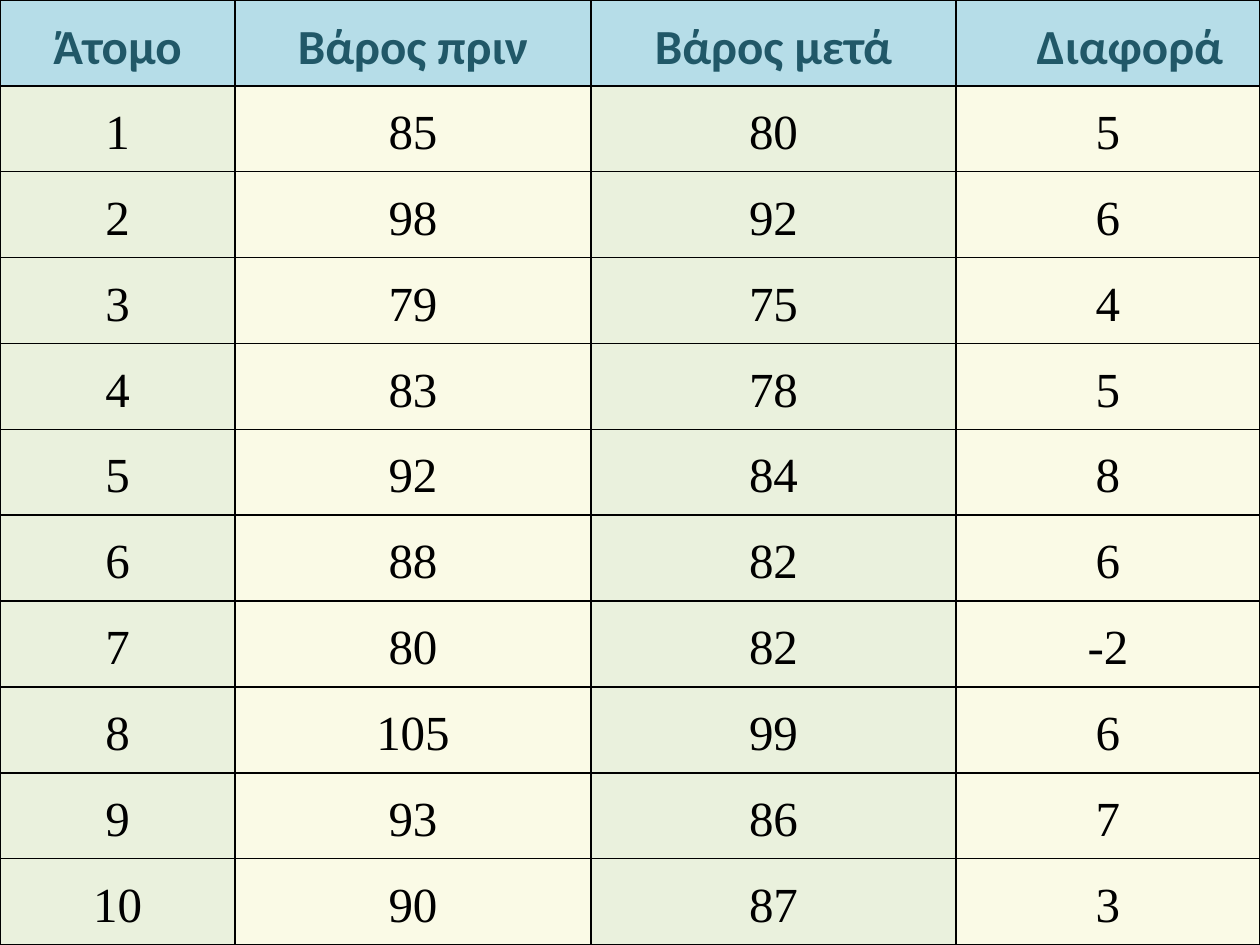
from lxml.etree import SubElement
from pptx import Presentation
from pptx.dml.color import RGBColor
from pptx.enum.text import MSO_ANCHOR, PP_ALIGN
from pptx.oxml.ns import qn
from pptx.util import Emu, Pt

HEADINGS = ["Άτομο", "Βάρος πριν", "Βάρος μετά", "Διαφορά"]
WEIGHTS = [  # before, after
    (85, 80), (98, 92), (79, 75), (83, 78), (92, 84),
    (88, 82), (80, 82), (105, 99), (93, 86), (90, 87),
]
ROWS = [HEADINGS] + [
    [person, before, after, before - after]
    for person, (before, after) in enumerate(WEIGHTS, start=1)
]

SLIDE_WIDTH, SLIDE_HEIGHT = 1260, 945
COLUMN_WIDTHS = [235, 356, 365, 304]
SIDE_MARGIN = 9
DIFFERENCE_HEADING_INDENT = 44

HEADING_FILL = "B6DDE8"
COLUMN_FILLS = ["EAF1DD", "FAFAE6", "EAF1DD", "FAFAE6"]
BORDER_COLOR = "000000"
HEADING_FONT = {"name": "Calibri", "size": Pt(28), "bold": True}
NUMBER_FONT = {"name": "Times New Roman", "size": Pt(28), "bold": False}
PARAGRAPH_FORMAT = {
    "alignment": PP_ALIGN.CENTER,
    "line_spacing": 1.15,
    "space_before": Pt(3),
    "space_after": Pt(3),
}


def px(length):
    return Emu(round(length * 914400 / 126))


CELL_FORMAT = {
    "vertical_anchor": MSO_ANCHOR.MIDDLE,
    "margin_left": px(SIDE_MARGIN),
    "margin_right": px(SIDE_MARGIN),
    "margin_top": 0,
    "margin_bottom": 0,
}


def color(hex_string):
    return RGBColor.from_string(hex_string)


def apply_format(target, values):
    for attribute, value in values.items():
        setattr(target, attribute, value)


def add_borders(cell):
    """Draw all four borders; the schema wants them ahead of the fill."""
    properties = cell._tc.get_or_add_tcPr()
    for side in ("a:lnL", "a:lnR", "a:lnT", "a:lnB"):
        border = SubElement(properties, qn(side), w=str(Pt(1)))
        fill = SubElement(border, qn("a:solidFill"))
        SubElement(fill, qn("a:srgbClr"), val=BORDER_COLOR)


def fill_cell(cell, content, font_format, text_color, fill_color):
    apply_format(cell, CELL_FORMAT)
    add_borders(cell)
    cell.fill.solid()
    cell.fill.fore_color.rgb = color(fill_color)
    cell.text = str(content)
    paragraph = cell.text_frame.paragraphs[0]
    apply_format(paragraph, PARAGRAPH_FORMAT)
    font = paragraph.runs[0].font
    apply_format(font, font_format)
    font.color.rgb = color(text_color)


def main():
    presentation = Presentation()
    presentation.slide_width = px(SLIDE_WIDTH)
    presentation.slide_height = px(SLIDE_HEIGHT)
    slide = presentation.slides.add_slide(presentation.slide_layouts[6])

    weights_table = slide.shapes.add_table(
        len(ROWS), len(HEADINGS), 0, 0, px(SLIDE_WIDTH), px(SLIDE_HEIGHT)
    ).table
    for column, width in zip(weights_table.columns, COLUMN_WIDTHS):
        column.width = px(width)
    for row in weights_table.rows:
        row.height = px(SLIDE_HEIGHT / len(ROWS))

    for row_index, row_content in enumerate(ROWS):
        for column_index, content in enumerate(row_content):
            cell = weights_table.cell(row_index, column_index)
            if row_index == 0:
                fill_cell(cell, content, HEADING_FONT, "215868", HEADING_FILL)
            else:
                fill_cell(cell, content, NUMBER_FONT, "000000", COLUMN_FILLS[column_index])

    difference_heading = weights_table.cell(0, len(HEADINGS) - 1)
    difference_heading.margin_left = px(SIDE_MARGIN + DIFFERENCE_HEADING_INDENT)

    presentation.save("out.pptx")


if __name__ == "__main__":
    main()
